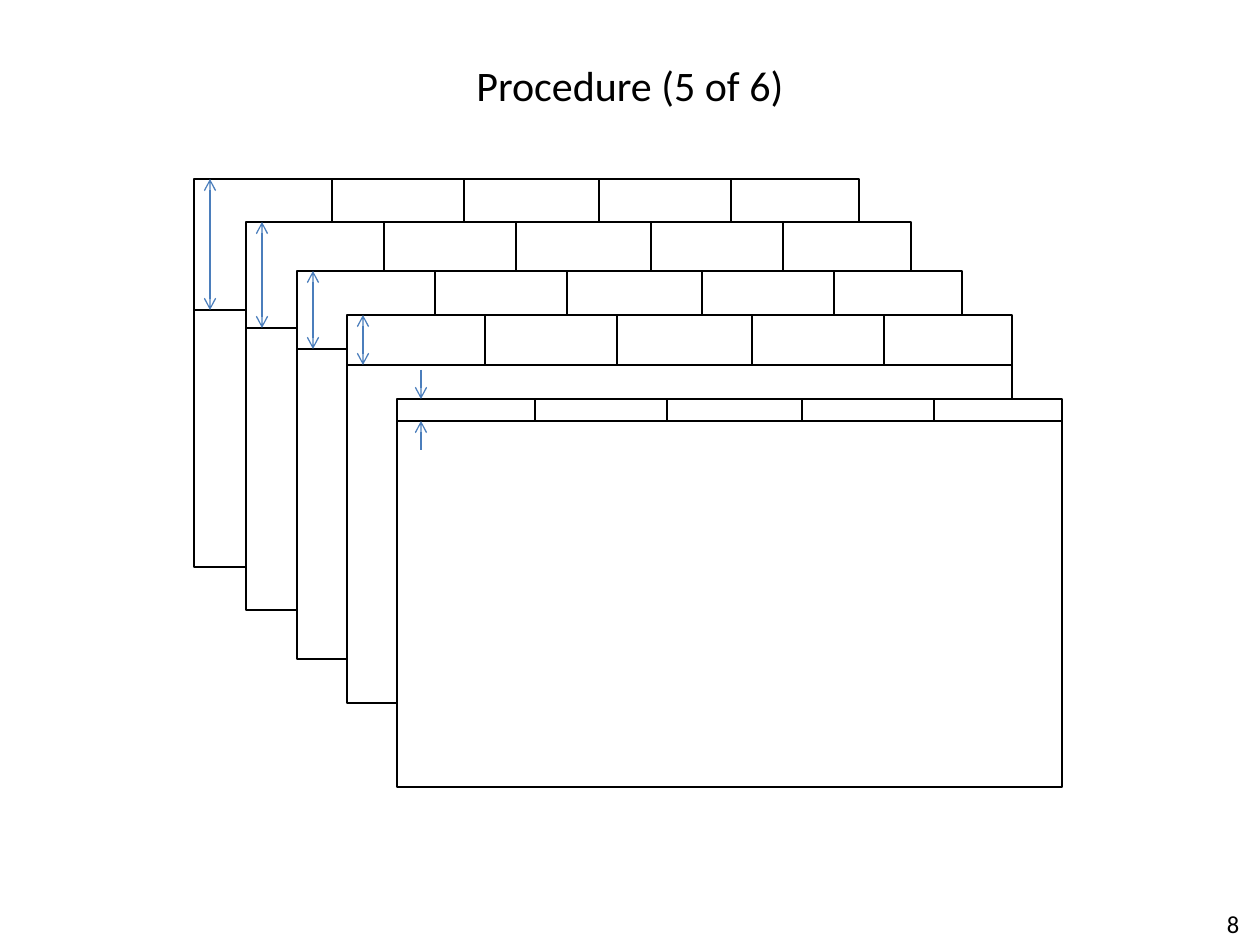
"""Build the procedure slide: five stacked sheets with shrinking header rows."""
import pptx
import pptx.dml.color
import pptx.enum.shapes
import pptx.enum.text
import pptx.oxml
import pptx.oxml.ns
import pptx.util

TITLE = "Procedure (5 of 6)"
PAGE = "8"
FONT = "Calibri"
COLORS = {"ink": "000000", "paper": "FFFFFF", "arrow": "4B7EBC"}
PX = 914400 // 126
SHEET_W, SHEET_H = 665, 388
DIVIDERS = [138, 270, 405, 537]
SHEETS = [
    {"left": 194, "top": 179, "header": 131},
    {"left": 246, "top": 222, "header": 106},
    {"left": 297, "top": 271, "header": 78},
    {"left": 347, "top": 315, "header": 50},
    {"left": 397, "top": 399, "header": 22},
]
SPAN_ARROW_DX, GAP_ARROW_DX, GAP_ARROW_LEN = 16, 24, 29


def px(n):
    return pptx.util.Emu(n * PX)


def rgb(name):
    return pptx.dml.color.RGBColor.from_string(COLORS[name])


def add_line(slide, x1, y1, x2, y2, color="ink", width=1.5, ends=()):
    kind = pptx.enum.shapes.MSO_CONNECTOR.STRAIGHT
    cxn = slide.shapes.add_connector(kind, px(x1), px(y1), px(x2), px(y2))
    cxn.line.color.rgb = rgb(color)
    cxn.line.width = pptx.util.Pt(width)
    ln = cxn.line._get_or_add_ln()
    for end in ends:
        etree_end = pptx.oxml.ns.qn(f"a:{end}")
        ln.append(ln.makeelement(etree_end, {"type": "arrow"}))
    sp_pr = cxn._element.spPr
    sp_pr.append(sp_pr.makeelement(pptx.oxml.ns.qn("a:effectLst"), {}))


def add_arrow(slide, x, y1, y2, ends=("tailEnd",)):
    add_line(slide, x, y1, x, y2, "arrow", 0.75, ends)


def add_sheet(slide, left, top, header):
    kind = pptx.enum.shapes.MSO_SHAPE.RECTANGLE
    sp = slide.shapes.add_shape(kind, px(left), px(top), px(SHEET_W), px(SHEET_H))
    sp.shadow.inherit = False
    sp.fill.solid()
    sp.fill.fore_color.rgb = rgb("paper")
    sp.line.color.rgb = rgb("ink")
    sp.line.width = pptx.util.Pt(1.5)
    bottom = top + header
    add_line(slide, left, bottom, left + SHEET_W, bottom)
    for dx in DIVIDERS:
        add_line(slide, left + dx, top, left + dx, bottom)


def set_text(sp, box, text, size):
    sp.left, sp.top, sp.width, sp.height = map(px, box)
    tf = sp.text_frame
    tf.word_wrap = False
    tf.vertical_anchor = pptx.enum.text.MSO_ANCHOR.MIDDLE
    p = tf.paragraphs[0]
    p.alignment = pptx.enum.text.PP_ALIGN.CENTER
    r = p.add_run()
    r.text = text
    r.font.name = FONT
    r.font.size = pptx.util.Pt(size)
    r.font.color.rgb = rgb("ink")


def main():
    prs = pptx.Presentation()
    prs.slide_width, prs.slide_height = px(1260), px(945)
    slide = prs.slides.add_slide(prs.slide_layouts[5])
    set_text(slide.shapes.title, (462, 53, 336, 63), TITLE, 24)
    page = slide.shapes.add_textbox(0, 0, 0, 0)
    set_text(page, (1206, 902, 54, 43), PAGE, 14)

    for sheet in SHEETS:
        add_sheet(slide, **sheet)
        left, top = sheet["left"], sheet["top"]
        bottom = top + sheet["header"]
        if sheet is not SHEETS[-1]:
            add_arrow(slide, left + SPAN_ARROW_DX, top, bottom, ("headEnd", "tailEnd"))
        else:
            x = left + GAP_ARROW_DX
            add_arrow(slide, x, top - GAP_ARROW_LEN, top)
            add_arrow(slide, x, bottom + GAP_ARROW_LEN, bottom)

    prs.save("out.pptx")


if __name__ == "__main__":
    main()
